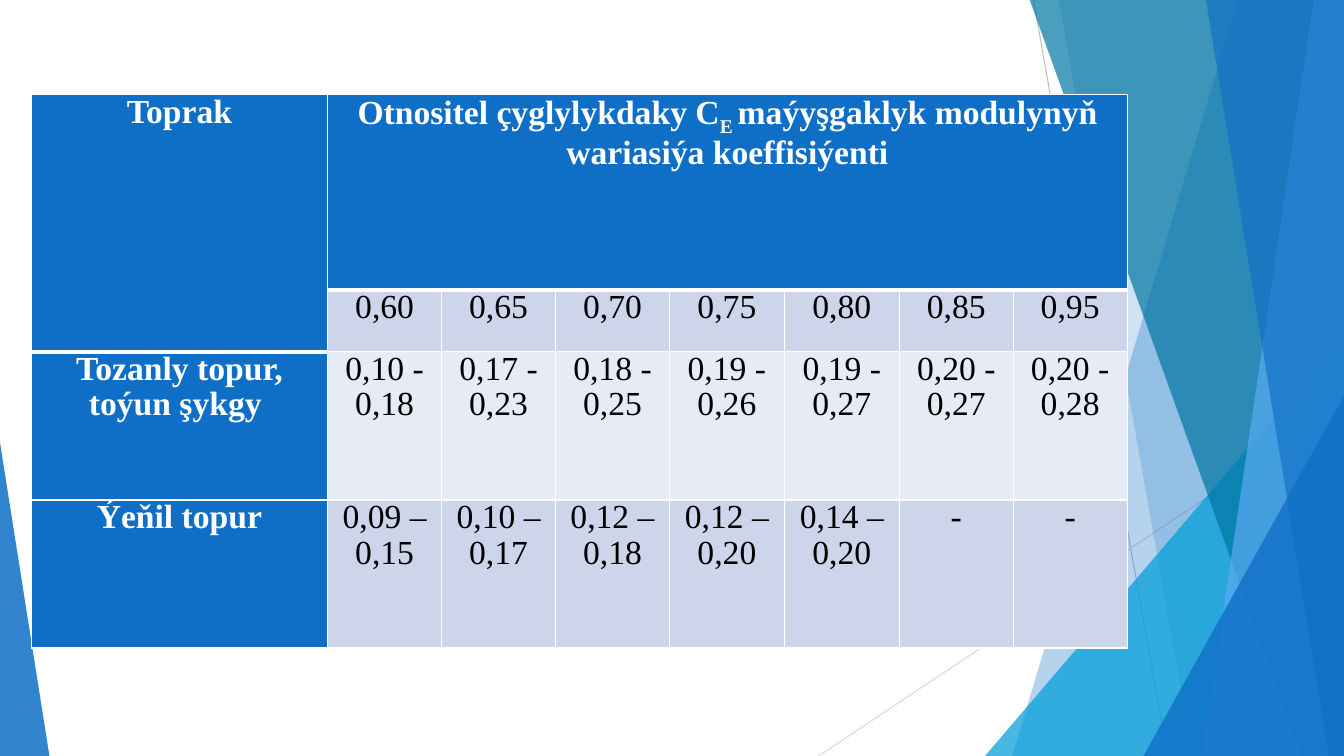
from lxml import etree
from pptx import Presentation
from pptx.dml.color import RGBColor
from pptx.enum.shapes import MSO_CONNECTOR, MSO_SHAPE
from pptx.enum.text import PP_ALIGN
from pptx.oxml.ns import qn
from pptx.util import Inches, Pt

BLUE = RGBColor(0x0F, 0x6F, 0xC6)
LIGHT_BLUE = RGBColor(0x59, 0xAA, 0xF2)
CYAN = RGBColor(0x00, 0x9D, 0xD9)
TEAL = RGBColor(0x00, 0x76, 0xA3)
BAND_DARK = RGBColor(0xCC, 0xD5, 0xEA)
BAND_LIGHT = RGBColor(0xE7, 0xEB, 0xF5)
GRAY = RGBColor(0xBF, 0xBF, 0xBF)
LIGHT_GRAY = RGBColor(0xD9, 0xD9, 0xD9)
WHITE = RGBColor(0xFF, 0xFF, 0xFF)
BLACK = RGBColor(0, 0, 0)

FONT = "Times New Roman"
WIDTH, HEIGHT = 13.33, 7.5
TOP = -0.01
COLUMN_WIDTHS = [2.94, 1.13, 1.13, 1.13, 1.14, 1.14, 1.13, 1.13]
ROW_HEIGHTS = [1.94, 0.61, 1.47, 1.47]
HEADING = [("Otnositel çyglylykdaky C", False), ("E ", True),
           ("maýyşgaklyk modulynyň wariasiýa koeffisiýenti", False)]
ROWS = [
    ["0,60", "0,65", "0,70", "0,75", "0,80", "0,85", "0,95"],
    ["Tozanly topur, toýun şykgy ", "0,10 - 0,18", "0,17 - 0,23", "0,18 - 0,25",
     "0,19 - 0,26", "0,19 - 0,27", "0,20 - 0,27", "0,20 - 0,28"],
    ["Ýeňil topur", "0,09 – 0,15", "0,10 – 0,17", "0,12 – 0,18",
     "0,12 – 0,20", "0,14 – 0,20", "-", "-"],
]


def paint(sp, color, opacity):
    """Fill a shape with a see-through colour and no outline."""
    sp.shadow.inherit = False
    sp.line.fill.background()
    sp.fill.solid()
    sp.fill.fore_color.rgb = color
    clr = sp.fill._xPr.find(qn("a:solidFill"))[0]
    etree.SubElement(clr, qn("a:alpha"), val=str(opacity * 1000))


def add_line(s, start, end, color):
    line = s.shapes.add_connector(MSO_CONNECTOR.STRAIGHT,
                                  *[Inches(v) for v in start + end])
    line.line.color.rgb = color
    line.line.width = Pt(0.75)
    etree.SubElement(line._element.spPr, qn("a:effectLst"))


def add_facet(s, top_x, bottom_x, color, opacity):
    """Slanted left edge, reaching to the right side of the slide."""
    points = [(top_x, TOP), (WIDTH, TOP), (WIDTH, HEIGHT), (bottom_x, HEIGHT)]
    points = [(Inches(x), Inches(y)) for x, y in points]
    builder = s.shapes.build_freeform(*points[0], scale=1.0)
    builder.add_line_segments(points[1:], close=True)
    paint(builder.convert_to_shape(), color, opacity)


def add_triangle(s, left, top, width, apex, color, opacity):
    """Triangle that stands on the bottom edge of the slide."""
    sp = s.shapes.add_shape(MSO_SHAPE.ISOSCELES_TRIANGLE, Inches(left), Inches(top),
                            Inches(width), Inches(HEIGHT - top))
    sp.adjustments[0] = apex
    paint(sp, color, opacity)


def set_borders(cell, top, bottom):
    tcPr = cell._tc.get_or_add_tcPr()
    for side, width in (("L", 1), ("R", 1), ("T", top), ("B", bottom)):
        ln = etree.SubElement(tcPr, qn("a:ln" + side), w=str(Pt(width)))
        fill = etree.SubElement(ln, qn("a:solidFill"))
        etree.SubElement(fill, qn("a:srgbClr"), val=str(WHITE))


def style_cell(cell, fill, top, bottom):
    set_borders(cell, top, bottom)
    cell.fill.solid()
    cell.fill.fore_color.rgb = fill
    cell.margin_left = cell.margin_right = Inches(0.07)
    cell.margin_top = cell.margin_bottom = 0


def write_cell(cell, parts, color, bold):
    p = cell.text_frame.paragraphs[0]
    p.alignment = PP_ALIGN.CENTER
    p.line_spacing = 0.96
    for text, subscript in parts:
        r = p.add_run()
        r.text = text
        r.font.name = FONT
        r.font.size = Pt(24)
        r.font.bold = bold
        r.font.color.rgb = color
        if subscript:
            r.font._element.set("baseline", "-25000")


def add_soil_table(s):
    table = s.shapes.add_table(len(ROW_HEIGHTS), len(COLUMN_WIDTHS), Inches(0.31),
                               Inches(0.94), Inches(sum(COLUMN_WIDTHS)),
                               Inches(sum(ROW_HEIGHTS))).table
    for column, width in zip(table.columns, COLUMN_WIDTHS):
        column.width = Inches(width)
    for row, height in zip(table.rows, ROW_HEIGHTS):
        row.height = Inches(height)

    # Fills, and a thick rule under the header cells
    for i in range(len(ROW_HEIGHTS)):
        for j in range(len(COLUMN_WIDTHS)):
            header_end = 1 if j == 0 else 0
            band = BAND_LIGHT if i == 2 else BAND_DARK
            style_cell(table.cell(i, j), BLUE if i == 0 or j == 0 else band,
                       3 if i == header_end + 1 else 1,
                       3 if i <= header_end else 1)

    # Merged header cells
    table.cell(0, 0).merge(table.cell(1, 0))
    table.cell(0, 1).merge(table.cell(0, 7))
    write_cell(table.cell(0, 0), [("Toprak", False)], WHITE, True)
    write_cell(table.cell(0, 1), HEADING, WHITE, True)

    # Body text
    for i, row in enumerate(ROWS, start=1):
        for j, text in enumerate(row, start=len(COLUMN_WIDTHS) - len(row)):
            write_cell(table.cell(i, j), [(text, False)],
                       WHITE if j == 0 else BLACK, j == 0)


def add_backdrop(s):
    add_line(s, (10.25, 0), (11.58, HEIGHT), GRAY)
    add_line(s, (WIDTH, 4.03), (8.12, HEIGHT), LIGHT_GRAY)
    add_facet(s, 12.28, 10.04, BLUE, 30)
    add_facet(s, 10.5, 11.83, BLUE, 20)
    add_triangle(s, 9.77, 3.33, 3.56, 1, CYAN, 72)
    add_facet(s, 10.21, 12.91, TEAL, 70)
    add_facet(s, 13.03, 11.92, LIGHT_BLUE, 70)
    add_facet(s, 11.96, 13.18, BLUE, 65)
    add_triangle(s, 11.34, 3.93, 1.99, 1, BLUE, 80)
    add_triangle(s, 0, 4.39, 0.49, 0, BLUE, 85)


def main():
    prs = Presentation()
    prs.slide_width, prs.slide_height = Inches(WIDTH), Inches(HEIGHT)
    s = prs.slides.add_slide(prs.slide_layouts[6])
    add_backdrop(s)
    add_soil_table(s)
    prs.save("out.pptx")


if __name__ == "__main__":
    main()
